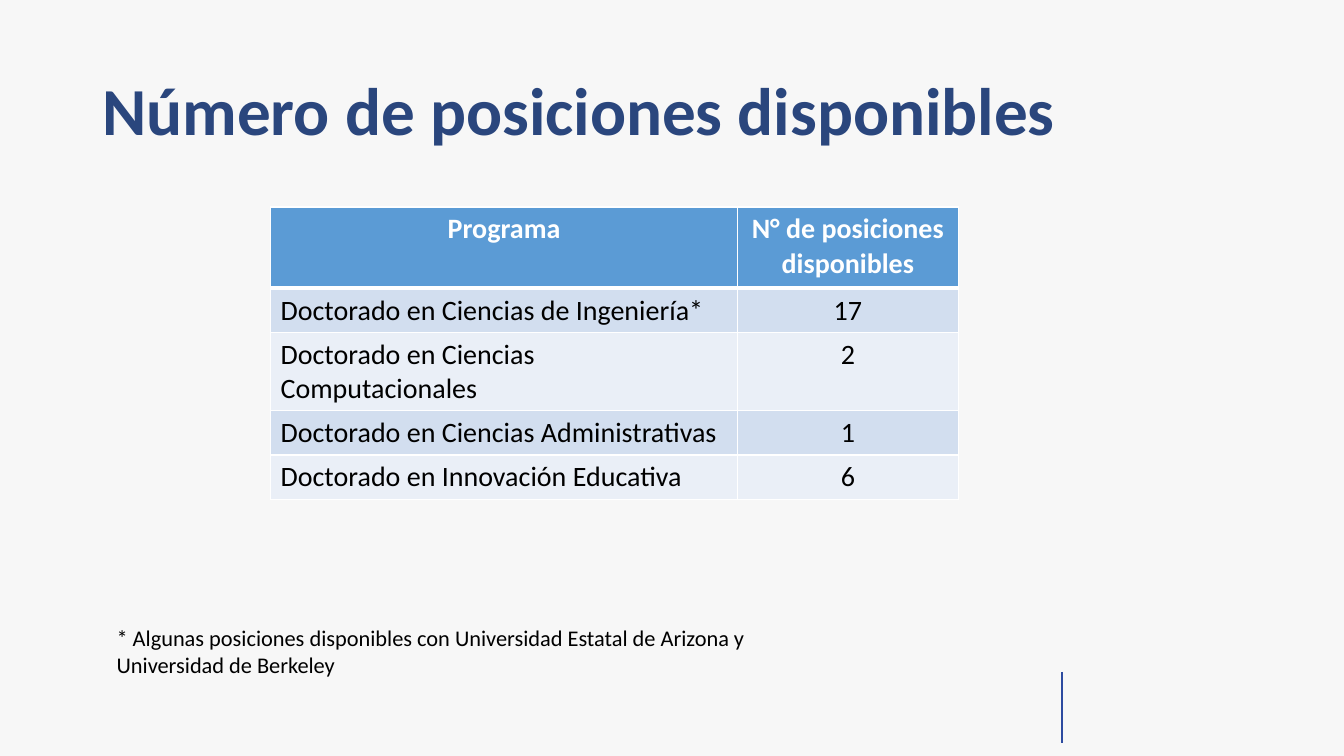
from dataclasses import dataclass

from lxml import etree
from pptx import Presentation
from pptx.dml.color import RGBColor
from pptx.enum import shapes, text
from pptx.oxml import ns
from pptx.util import Pt


@dataclass(frozen=True)
class Theme:
    """Colours, font and type sizes of the slide."""
    font: str = "Calibri"
    background: str = "F7F7F7"
    title: str = "2A467D"
    rule: str = "2D4BA0"
    header: str = "5B9BD5"
    bands: tuple = ("D2DEEF", "EAEFF7")
    white: str = "FFFFFF"
    black: str = "000000"
    title_size: int = 48
    table_size: int = 20
    note_size: int = 16


THEME = Theme()
PROGRAMS = [
    ("Programa", "N° de posiciones disponibles"),
    ("Doctorado en Ciencias de Ingeniería*", "17"),
    ("Doctorado en Ciencias Computacionales", "2"),
    ("Doctorado en Ciencias Administrativas", "1"),
    ("Doctorado en Innovación Educativa", "6"),
]
COLUMN_WIDTHS = (333.7, 157.5)
ROW_HEIGHTS = (58, 31.6, 56, 31.6, 31.6)


def rgb(color):
    """Turn a hex string into a colour."""
    return RGBColor.from_string(color)


def style_runs(tf, size, color, bold=False):
    """Format every run of a text frame."""
    for p in tf.paragraphs:
        for r in p.runs:
            r.font.name = THEME.font
            r.font.size = Pt(size)
            r.font.bold = bold
            r.font.color.rgb = rgb(color)


def add_text(s, box, words, size, color, bold=False):
    """Add a wrapping text box and return its text frame."""
    tf = s.shapes.add_textbox(*map(Pt, box)).text_frame
    tf.word_wrap = True
    tf.text = words
    style_runs(tf, size, color, bold)
    return tf


def add_rule(s, x, top, bottom):
    """Add the vertical line near the foot of the slide."""
    line = s.shapes.add_connector(
        shapes.MSO_CONNECTOR.STRAIGHT, Pt(x), Pt(top), Pt(x), Pt(bottom))
    line.line.color.rgb = rgb(THEME.rule)
    line.line.width = Pt(1.5)
    etree.SubElement(line.element.spPr, ns.qn("a:effectLst"))


def set_borders(cell, top, bottom):
    """Draw white borders, with the given top and bottom widths."""
    tc_pr = cell._tc.get_or_add_tcPr()
    for side, width in (("L", 1), ("R", 1), ("T", top), ("B", bottom)):
        ln = etree.SubElement(tc_pr, ns.qn(f"a:ln{side}"), w=str(Pt(width)))
        fill = etree.SubElement(ln, ns.qn("a:solidFill"))
        etree.SubElement(fill, ns.qn("a:srgbClr"), val=THEME.white)


def fill_cell(cell, words, row, col):
    """Write and style one table cell by its place in the grid."""
    is_header = row == 0
    cell.text = words
    style_runs(cell.text_frame, THEME.table_size,
               THEME.white if is_header else THEME.black, is_header)
    if is_header or col == 1:
        cell.text_frame.paragraphs[0].alignment = text.PP_ALIGN.CENTER
    set_borders(cell, 3 if row == 1 else 1, 3 if is_header else 1)
    cell.fill.solid()
    cell.fill.fore_color.rgb = rgb(
        THEME.header if is_header else THEME.bands[(row - 1) % 2])


def add_program_table(s, left, top):
    """Add the table of programs and open positions."""
    table = s.shapes.add_table(
        len(PROGRAMS), len(COLUMN_WIDTHS), Pt(left), Pt(top),
        Pt(sum(COLUMN_WIDTHS)), Pt(sum(ROW_HEIGHTS))).table
    for column, width in zip(table.columns, COLUMN_WIDTHS):
        column.width = Pt(width)
    for row, (height, values) in enumerate(zip(ROW_HEIGHTS, PROGRAMS)):
        table.rows[row].height = Pt(height)
        for col, words in enumerate(values):
            fill_cell(table.cell(row, col), words, row, col)


def main():
    """Build the slide and save it."""
    prs = Presentation()
    prs.slide_width, prs.slide_height = Pt(960), Pt(540)
    s = prs.slides.add_slide(prs.slide_layouts[6])
    s.background.fill.solid()
    s.background.fill.fore_color.rgb = rgb(THEME.background)

    add_rule(s, 758.5, 480, 531)
    title = add_text(s, (66, 28.75, 828, 104.4), "Número de posiciones disponibles",
                     THEME.title_size, THEME.title, True)
    title.vertical_anchor = text.MSO_ANCHOR.MIDDLE
    title.paragraphs[0].line_spacing = 0.9
    add_program_table(s, 193.2, 147.9)
    note = add_text(s, (76.2, 442.2, 497, 46),
                    "* Algunas posiciones disponibles con Universidad Estatal de Arizona "
                    "y Universidad de Berkeley", THEME.note_size, THEME.black)
    note.auto_size = text.MSO_AUTO_SIZE.SHAPE_TO_FIT_TEXT
    prs.save("out.pptx")


if __name__ == "__main__":
    main()
